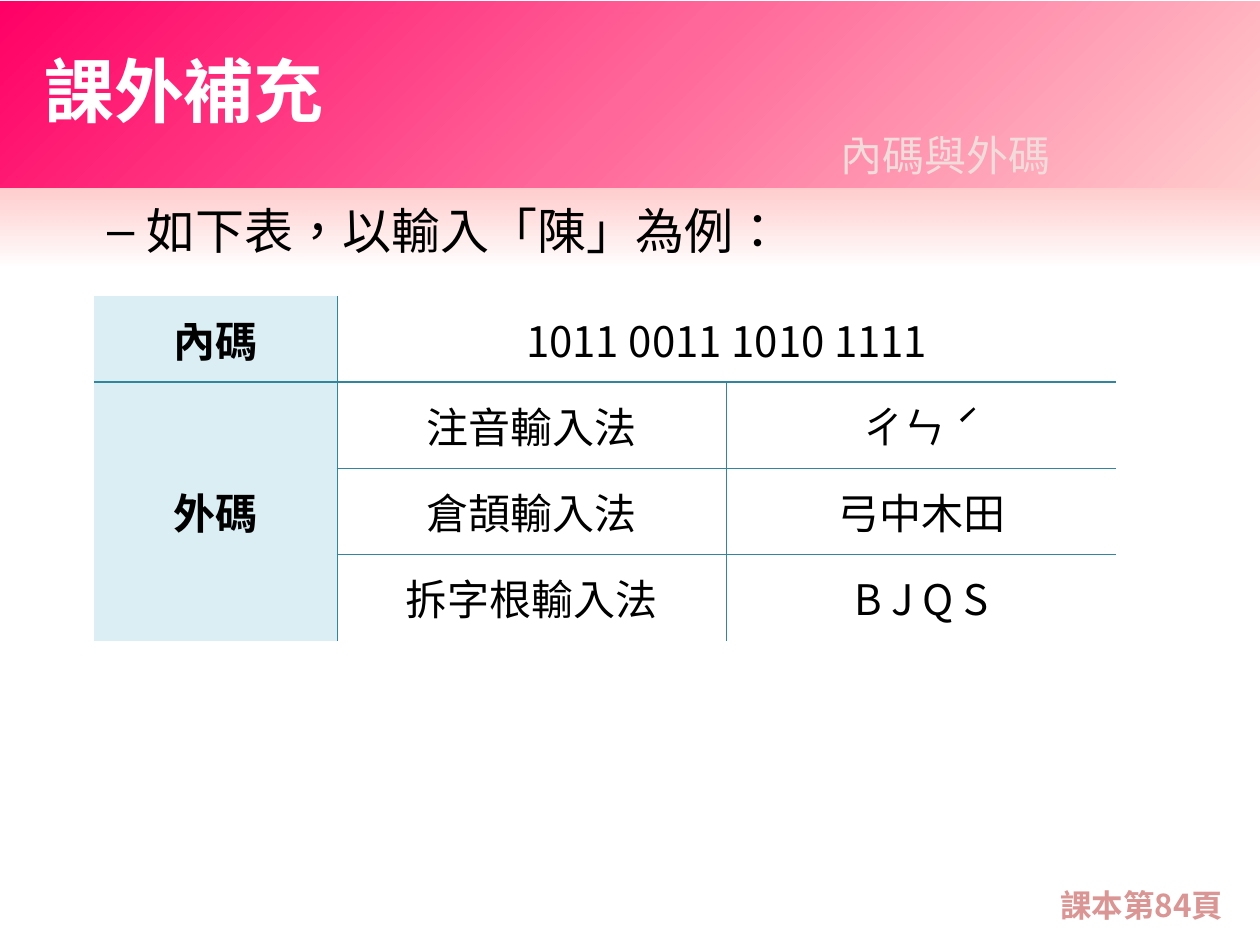
import copy

import lxml.etree
import pptx
import pptx.dml.color
import pptx.enum.shapes
import pptx.enum.text
import pptx.oxml.ns
import pptx.util

Pt = pptx.util.Pt
PP_ALIGN = pptx.enum.text.PP_ALIGN
MIDDLE = pptx.enum.text.MSO_ANCHOR.MIDDLE
AUTO_SIZE = pptx.enum.text.MSO_AUTO_SIZE
qn = pptx.oxml.ns.qn
FONT = "Noto Sans CJK SC"


def rgb(hex_color):
    return pptx.dml.color.RGBColor.from_string(hex_color)


def add_run(paragraph, text, size, color, bold=False, align=PP_ALIGN.LEFT):
    """Add a Traditional Chinese run with FONT for Latin and East Asian text."""
    paragraph.alignment = align
    run = paragraph.add_run()
    run.text = text
    run.font.size = Pt(size)
    run.font.bold = bold
    run.font.color.rgb = rgb(color)
    run.font.name = FONT
    run.font._element.set("lang", "zh-TW")
    lxml.etree.SubElement(run.font._element, qn("a:ea"), typeface=FONT)


prs = pptx.Presentation()
prs.slide_width, prs.slide_height = Pt(720), Pt(540)
slide = prs.slides.add_slide(prs.slide_layouts[1])
title, body = slide.placeholders

# Background bands, placed behind the placeholders
bands = [
    (106.5, 433.5, 270, [(0, "FFCCCC"), (0.11, "FFFFFF"), (1, "FFFFFF")]),
    (0.75, 106.5, 315, [(0, "FF0066"), (0.5, "FF6699"), (1, "FFCCCC")]),
]
for depth, (top, height, angle, stops) in enumerate(bands):
    band = slide.shapes.add_shape(
        pptx.enum.shapes.MSO_SHAPE.RECTANGLE, 0, Pt(top), Pt(720), Pt(height))
    band.shadow.inherit = False
    band.line.fill.background()
    band.fill.gradient()
    band.fill.gradient_angle = angle
    stop_list = band._element.spPr.find(qn("a:gradFill")).find(qn("a:gsLst"))
    stop_list.append(copy.deepcopy(stop_list[0]))
    for stop, (position, color) in zip(band.fill.gradient_stops, stops):
        stop.position = position
        stop.color.rgb = rgb(color)
    slide.shapes._spTree.insert(2 + depth, band._element)

# Title and lead-in
title.left, title.top, title.width, title.height = Pt(18), Pt(6), Pt(570), Pt(90)
title.text_frame.vertical_anchor = MIDDLE
title.text_frame.auto_size = AUTO_SIZE.NONE
add_run(title.text_frame.paragraphs[0], "課外補充", 40, "FFFFFF", bold=True)

body.left, body.top, body.width, body.height = Pt(18), Pt(111), Pt(684), Pt(384)
body.text_frame.auto_size = AUTO_SIZE.NONE
lead_in = body.text_frame.paragraphs[0]
lead_in.level = 1
lead_in.space_before = Pt(0)
indents = lead_in._p.get_or_add_pPr()
indents.set("marL", str(Pt(58.5)))
indents.set("indent", str(Pt(-22.5)))
lxml.etree.SubElement(indents, qn("a:buChar"), char="–")
add_run(lead_in, "如下表，以輸入「陳」為例：", 28, "000000")

# Page reference and section name
labels = [
    ("課本第84頁", (592.5, 502.5, 120, 29), 18, "D99694", True, PP_ALIGN.CENTER),
    ("內碼與外碼", (472, 70.5, 135.5, 36.25), 24, "F2DCDB", False, PP_ALIGN.RIGHT),
]
for text, place, size, color, bold, align in labels:
    label = slide.shapes.add_textbox(*map(Pt, place)).text_frame
    label.word_wrap = bold
    label.auto_size = AUTO_SIZE.SHAPE_TO_FIT_TEXT
    add_run(label.paragraphs[0], text, size, color, bold, align)

# Code table: equal neighbours are merged
codes = [
    ["內碼", "1011 0011 1010 1111", "1011 0011 1010 1111"],
    ["外碼", "注音輸入法", "ㄔㄣ ˊ"],
    ["外碼", "倉頡輸入法", "弓中木田"],
    ["外碼", "拆字根輸入法", "B J Q S"],
]
table = slide.shapes.add_table(4, 3, Pt(53.75), Pt(169), Pt(584), Pt(197.2)).table
table.first_row = table.horz_banding = False
for column, width in zip(table.columns, (139, 222.5, 222.5)):
    column.width = Pt(width)
for row in table.rows:
    row.height = Pt(49.3)
table.cell(0, 1).merge(table.cell(0, 2))
table.cell(1, 0).merge(table.cell(3, 0))

sides = {"L": (0, -1), "R": (0, 1), "T": (-1, 0), "B": (1, 0)}
for r, row in enumerate(codes):
    for c, text in enumerate(row):
        cell = table.cell(r, c)
        cell.vertical_anchor = MIDDLE
        for side, (dr, dc) in sides.items():
            border = lxml.etree.SubElement(
                cell._tc.get_or_add_tcPr(), qn(f"a:ln{side}"), w=str(Pt(1)))
            inside = 0 <= r + dr < 4 and 0 <= c + dc < 3
            if inside and codes[r + dr][c + dc] != text:
                line = lxml.etree.SubElement(border, qn("a:solidFill"))
                lxml.etree.SubElement(line, qn("a:srgbClr"), val="31859C")
            else:
                lxml.etree.SubElement(border, qn("a:noFill"))
        if c == 0:
            cell.fill.solid()
            cell.fill.fore_color.rgb = rgb("DBEEF4")
        else:
            cell.fill.background()
        if not cell.is_spanned:
            add_run(cell.text_frame.paragraphs[0], text, 24, "000000",
                    bold=c == 0, align=PP_ALIGN.CENTER)

prs.save("out.pptx")
